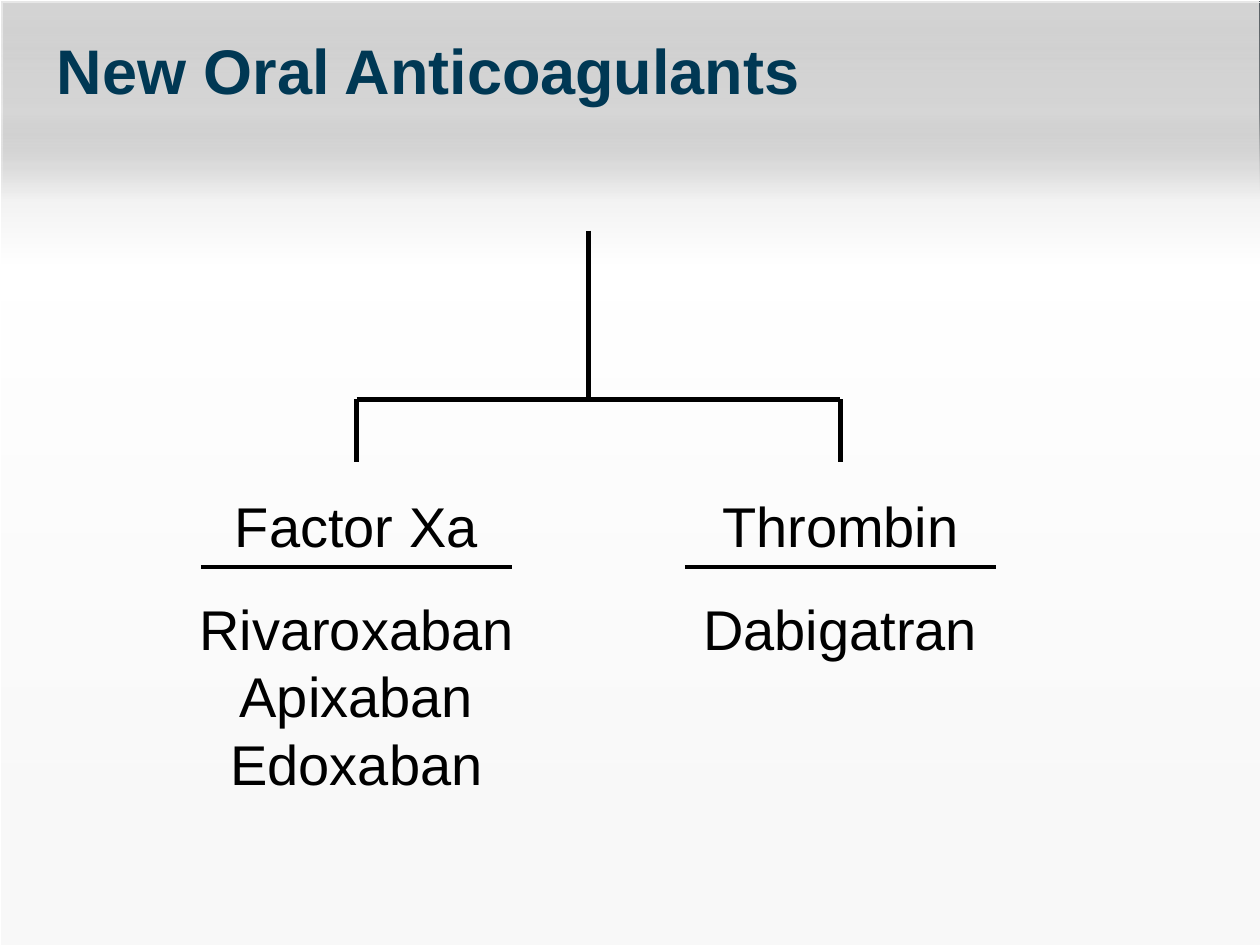
from lxml import etree
from pptx import Presentation
from pptx import util as u
from pptx.dml.color import RGBColor
from pptx.enum import shapes, text
from pptx.oxml import parse_xml
from pptx.oxml.ns import nsdecls, qn

BLACK = RGBColor(0x00, 0x00, 0x00)
WHITE = RGBColor(0xFF, 0xFF, 0xFF)
NAVY = RGBColor(0x00, 0x38, 0x54)
SLATE = RGBColor(0x44, 0x4E, 0x54)

WIDTH, HEIGHT = 10, 7.5
# Position in percent, colour, opacity in percent
SHADE_STOPS = [
    (0, RGBColor(0x80, 0x80, 0x80), 18),
    (12, RGBColor(0xB3, 0xB3, 0xB3), 31),
    (21, RGBColor(0xF2, 0xF2, 0xF2), 100),
    (28, WHITE, 100),
    (85, RGBColor(0xF8, 0xF8, 0xF8), 100),
]

ROOT_X, ROOT_TOP = 4.67, 1.83
BRANCH_Y, BRANCH_END = 3.17, 3.67
HEADING_TOP, RULE_Y, LIST_TOP = 3.85, 4.5, 4.67
RULE_WIDTH = 2.47
# Centre, heading, heading width, drugs, list width, list height
BRANCHES = [
    (2.83, "Factor Xa", 2.24, ["Rivaroxaban", "Apixaban", "Edoxaban"], 3.08, 1.72),
    (6.67, "Thrombin", 2.09, ["Dabigatran"], 2.58, 0.64),
]


def write_text(frame, lines, size=32, color=BLACK, bold=False,
               align=text.PP_ALIGN.CENTER, font="Arial"):
    frame.word_wrap = True
    frame.auto_size = text.MSO_AUTO_SIZE.NONE
    frame.vertical_anchor = text.MSO_ANCHOR.TOP
    for index, line in enumerate(lines):
        paragraph = frame.add_paragraph() if index else frame.paragraphs[0]
        paragraph.alignment = align
        run = paragraph.add_run()
        run.text = line
        run.font.name = font
        run.font.size = u.Pt(size)
        run.font.bold = bold
        run.font.color.rgb = color


class SlideBuilder:
    def __init__(self, presentation):
        self.slide = presentation.slides.add_slide(presentation.slide_layouts[5])
        self.shapes = self.slide.shapes

    def panel(self, left, top, line_color, line_width, stops=None):
        """Add a full-slide rectangle, shaded from top to bottom if stops are given."""
        shape = self.shapes.add_shape(
            shapes.MSO_SHAPE.RECTANGLE, u.Inches(left), u.Inches(top),
            u.Inches(WIDTH), u.Inches(HEIGHT))
        shape.shadow.inherit = False
        shape.line.color.rgb = line_color
        shape.line.width = u.Pt(line_width)
        shape.fill.background()
        if stops:
            stop_xml = "".join(
                f'<a:gs pos="{position * 1000}"><a:srgbClr val="{color}">'
                f'<a:alpha val="{opacity * 1000}"/></a:srgbClr></a:gs>'
                for position, color, opacity in stops)
            gradient = parse_xml(
                f'<a:gradFill {nsdecls("a")} rotWithShape="1"><a:gsLst>{stop_xml}</a:gsLst>'
                '<a:lin ang="5400000" scaled="0"/></a:gradFill>')
            properties = shape.element.spPr
            properties.replace(properties.find(qn("a:noFill")), gradient)

    def line(self, x1, y1, x2, y2, width=3):
        connector = self.shapes.add_connector(
            shapes.MSO_CONNECTOR.STRAIGHT,
            u.Inches(x1), u.Inches(y1), u.Inches(x2), u.Inches(y2))
        connector.line.color.rgb = BLACK
        connector.line.width = u.Pt(width)
        etree.SubElement(connector.element.spPr, qn("a:effectLst"))

    def centered_text(self, center, top, width, height, lines):
        box = self.shapes.add_textbox(
            u.Inches(center - width / 2), u.Inches(top), u.Inches(width), u.Inches(height))
        write_text(box.text_frame, lines)

    def title(self, words, left, top, width, height):
        """Fill the title placeholder and bring it in front of the panels."""
        title = self.shapes.title
        title.left, title.top = u.Inches(left), u.Inches(top)
        title.width, title.height = u.Inches(width), u.Inches(height)
        write_text(title.text_frame, [words], size=36, color=NAVY, bold=True,
                   align=text.PP_ALIGN.LEFT)
        title.element.getparent().append(title.element)


def main():
    presentation = Presentation()
    presentation.slide_width = u.Inches(WIDTH)
    presentation.slide_height = u.Inches(HEIGHT)
    builder = SlideBuilder(presentation)

    builder.panel(0, 0, SLATE, 1.5)
    for offset in (0.02, 0):
        builder.panel(offset, offset, WHITE, 0.25, SHADE_STOPS)
    builder.title("New Oral Anticoagulants", 0.35, 0.2, 7.5, 0.71)

    builder.line(ROOT_X, ROOT_TOP, ROOT_X, BRANCH_Y)
    builder.line(BRANCHES[0][0], BRANCH_Y, BRANCHES[-1][0], BRANCH_Y)
    for center, heading, heading_width, drugs, list_width, list_height in BRANCHES:
        builder.line(center, BRANCH_Y, center, BRANCH_END)
        builder.centered_text(center, HEADING_TOP, heading_width, 0.64, [heading])
        builder.line(center - RULE_WIDTH / 2, RULE_Y, center + RULE_WIDTH / 2, RULE_Y, 2.25)
        builder.centered_text(center, LIST_TOP, list_width, list_height, drugs)

    presentation.save("out.pptx")


if __name__ == "__main__":
    main()
